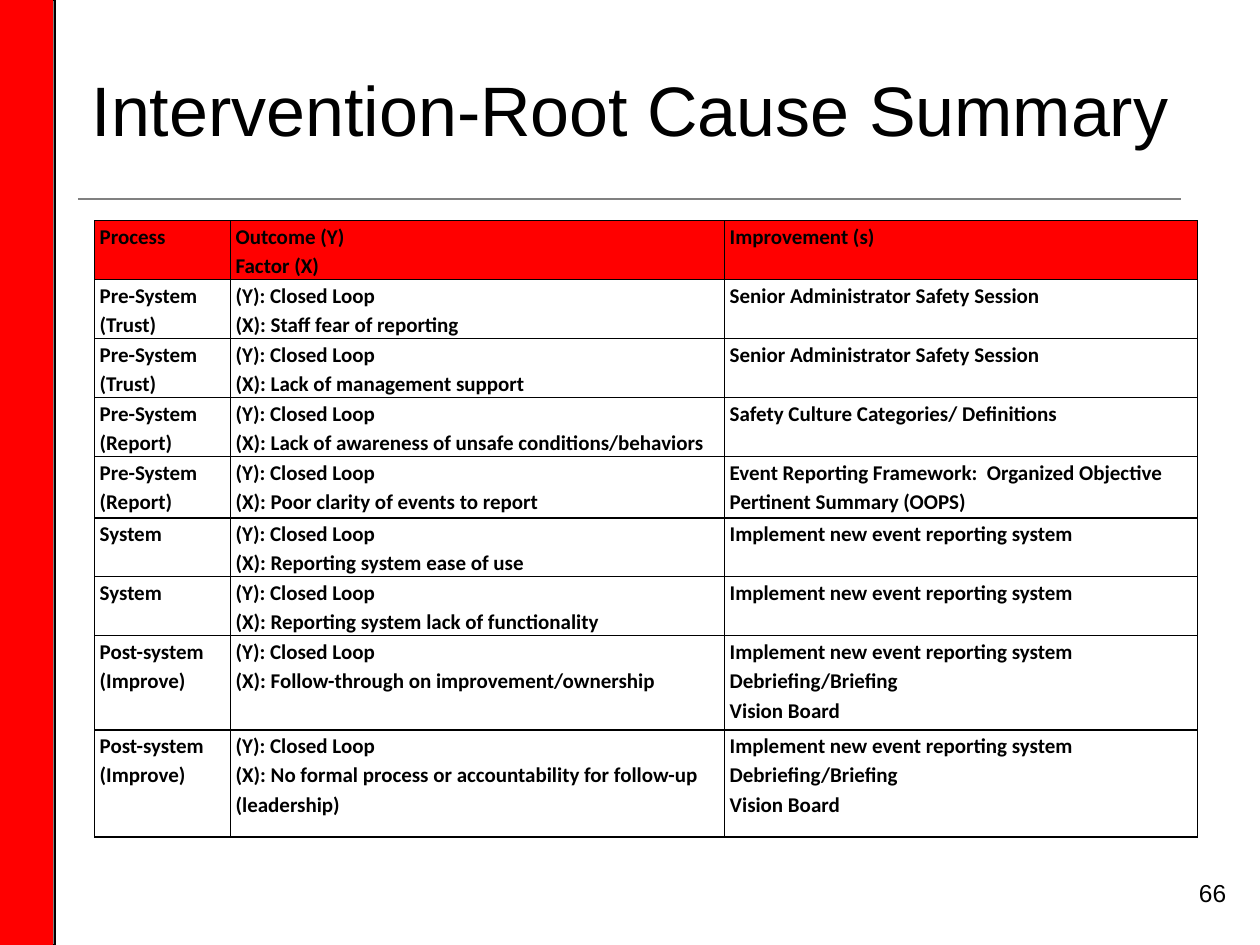
from lxml import etree
from pptx import Presentation
from pptx.dml.color import RGBColor
from pptx.enum.shapes import MSO_CONNECTOR, MSO_SHAPE
from pptx.enum.text import MSO_ANCHOR, PP_ALIGN
from pptx.oxml.ns import qn
from pptx.util import Cm, Pt

RECT = MSO_SHAPE.RECTANGLE
STRAIGHT = MSO_CONNECTOR.STRAIGHT
MIDDLE, TOP = MSO_ANCHOR.MIDDLE, MSO_ANCHOR.TOP
LEFT, CENTER, RIGHT = PP_ALIGN.LEFT, PP_ALIGN.CENTER, PP_ALIGN.RIGHT

COLORS = {"red": "FF0000", "gray": "808080", "black": "000000"}

COL_WIDTHS = [2.74, 9.96, 9.53]
ROW_HEIGHTS = [0.74, 1.09, 1.09, 1.09, 1.24, 1.09, 1.09, 1.9, 2.16]

HEADER = ("Process", "Outcome (Y)\nFactor (X)", "Improvement (s)")
SESSION = "Senior Administrator Safety Session"
NEW_SYSTEM = "Implement new event reporting system"
FOLLOW_UP = NEW_SYSTEM + "\nDebriefing/Briefing\nVision Board"
CAUSES = [
    ("Pre-System\n(Trust)", "Staff fear of reporting", SESSION),
    ("Pre-System\n(Trust)", "Lack of management support", SESSION),
    ("Pre-System\n(Report)", "Lack of awareness of unsafe conditions/behaviors",
     "Safety Culture Categories/ Definitions"),
    ("Pre-System\n(Report)", "Poor clarity of events to report",
     "Event Reporting Framework:  Organized Objective Pertinent Summary (OOPS)"),
    ("System", "Reporting system ease of use", NEW_SYSTEM),
    ("System", "Reporting system lack of functionality", NEW_SYSTEM),
    ("Post-system\n(Improve)", "Follow-through on improvement/ownership", FOLLOW_UP),
    ("Post-system\n(Improve)",
     "No formal process or accountability for follow-up (leadership)", FOLLOW_UP),
]


def rgb(name):
    return RGBColor.from_string(COLORS[name])


def write(tf, text, font, size, align, bold=False, spacing=None):
    for i, line in enumerate(text.split("\n")):
        p = tf.paragraphs[0] if i == 0 else tf.add_paragraph()
        p.alignment = align
        if spacing:
            p.line_spacing = spacing
        r = p.add_run()
        r.text = line
        r.font.name = font
        r.font.size = Pt(size)
        r.font.bold = bold
        r.font.color.rgb = rgb("black")


def add_bar(s, left, width, fill, line=None):
    sp = s.shapes.add_shape(RECT, Cm(left), 0, Cm(width), Cm(19.05))
    sp.shadow.inherit = False
    sp.fill.solid()
    sp.fill.fore_color.rgb = rgb(fill)
    if line:
        sp.line.color.rgb = rgb(line)
        sp.line.width = Pt(0.75)
    else:
        sp.line.fill.background()


def add_rule(s, x1, x2, y):
    cn = s.shapes.add_connector(STRAIGHT, Cm(x1), Cm(y), Cm(x2), Cm(y))
    cn.line.color.rgb = rgb("gray")
    cn.line.width = Pt(0.75)
    etree.SubElement(cn._element.spPr, qn("a:effectLst"))


def set_title(s, text):
    sp = s.shapes.title
    sp.left, sp.top, sp.width, sp.height = Cm(1.27), Cm(0.76), Cm(22.86), Cm(2.84)
    tf = sp.text_frame
    tf.vertical_anchor = MIDDLE
    write(tf, text, "Arial", 40, CENTER)


def add_page_number(s, text):
    sp = s.shapes.add_textbox(Cm(19.05), Cm(17.58), Cm(5.92), Cm(1.32))
    tf = sp.text_frame
    tf.word_wrap = True
    write(tf, text, "Arial", 14, RIGHT)


def set_borders(cell):
    tc_pr = cell._tc.get_or_add_tcPr()
    for i, side in enumerate(("lnL", "lnR", "lnT", "lnB")):
        ln = etree.Element(qn("a:" + side), w=str(Pt(1)))
        fill = etree.SubElement(ln, qn("a:solidFill"))
        etree.SubElement(fill, qn("a:srgbClr"), val=COLORS["black"])
        tc_pr.insert(i, ln)


def fill_cell(cell, text, is_header):
    cell.margin_left = cell.margin_right = Cm(0.1)
    cell.margin_top = cell.margin_bottom = 0
    cell.vertical_anchor = TOP
    if is_header:
        cell.fill.solid()
        cell.fill.fore_color.rgb = rgb("red")
    else:
        cell.fill.background()
    set_borders(cell)
    write(cell.text_frame, text, "Calibri", 12, LEFT, bold=True, spacing=1.15)


def add_cause_table(s):
    rows = [HEADER] + [
        (process, "(Y): Closed Loop\n(X): " + factor, improvement)
        for process, factor, improvement in CAUSES
    ]
    table = s.shapes.add_table(
        len(rows), len(COL_WIDTHS), Cm(1.91), Cm(4.45),
        Cm(sum(COL_WIDTHS)), Cm(sum(ROW_HEIGHTS))).table
    table.horz_banding = False
    for col, width in zip(table.columns, COL_WIDTHS):
        col.width = Cm(width)
    for row, height in zip(table.rows, ROW_HEIGHTS):
        row.height = Cm(height)
    for i, texts in enumerate(rows):
        for j, text in enumerate(texts):
            fill_cell(table.cell(i, j), text, i == 0)


def main():
    prs = Presentation()
    prs.slide_width, prs.slide_height = Cm(25.4), Cm(19.05)
    s = prs.slides.add_slide(prs.slide_layouts[5])
    add_bar(s, 0.91, 0.2, "gray", "black")
    add_bar(s, 0, 1.07, "red")
    add_rule(s, 1.57, 23.8, 4.01)
    set_title(s, "Intervention-Root Cause Summary")
    add_cause_table(s)
    add_page_number(s, "66")
    prs.save("out.pptx")


if __name__ == "__main__":
    main()
